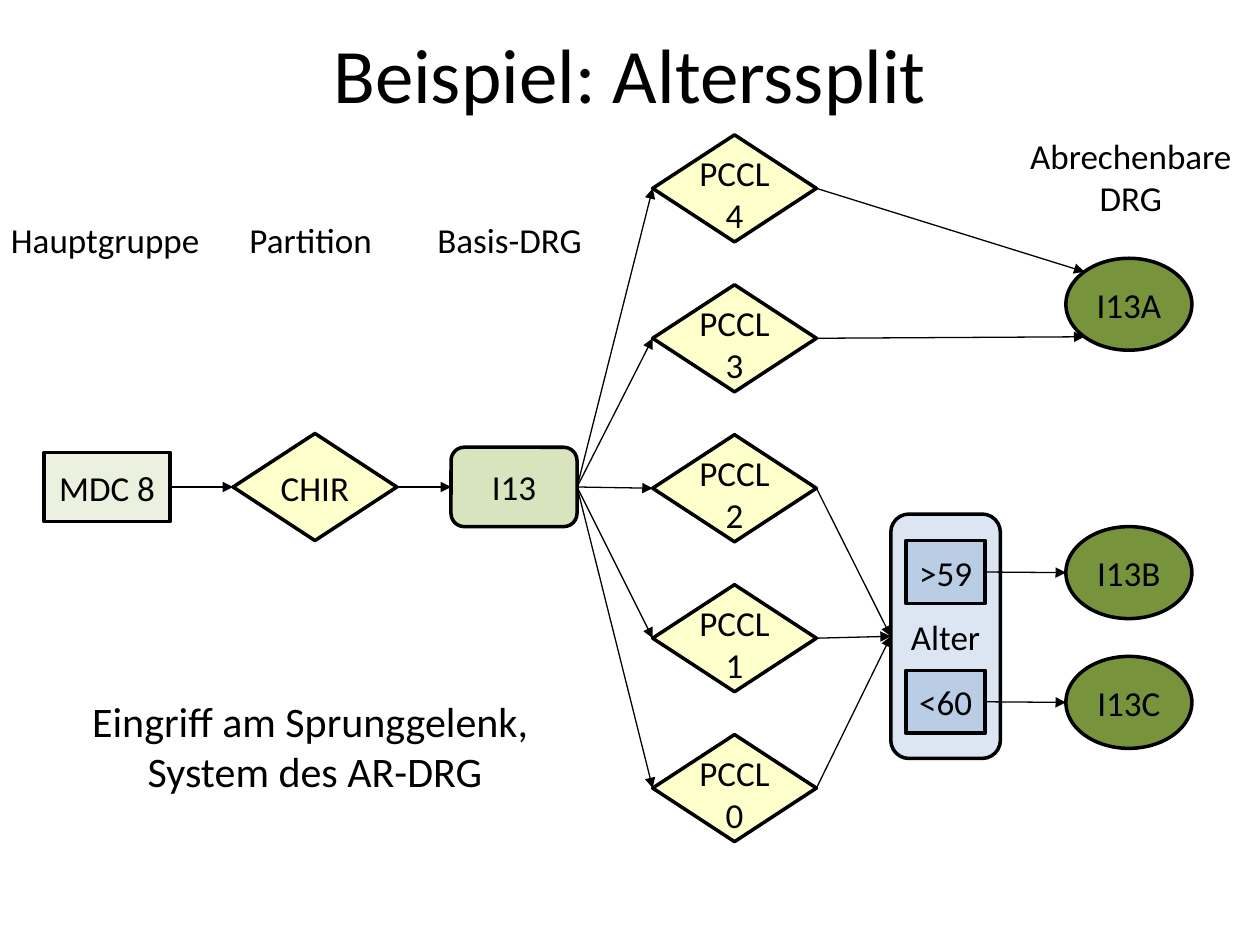
"""Build a decision-tree slide for an age split in the AR-DRG system."""
from dataclasses import dataclass
from math import sqrt

from lxml.etree import SubElement
from pptx import Presentation
from pptx.dml.color import RGBColor
from pptx.enum.shapes import MSO_CONNECTOR, MSO_SHAPE
from pptx.enum.text import MSO_ANCHOR, PP_ALIGN
from pptx.oxml.ns import qn
from pptx.util import Inches, Pt


@dataclass(frozen=True)
class Theme:
    font: str = "Calibri"
    ink: str = "000000"
    group: str = "EBF1DE"
    choice: str = "FFFFCC"
    base: str = "D7E4BD"
    age: str = "DCE6F2"
    limit: str = "B9CDE5"
    result: str = "77933C"
    title: int = 44
    note: int = 24
    label: int = 20
    edge: float = 2
    arrow: float = 0.75


THEME = Theme()
LEFT, RIGHT = 1, 3


def color(name):
    return RGBColor.from_string(getattr(THEME, name))


def write(shape, text, size, anchor=MSO_ANCHOR.MIDDLE, above=0.05, below=0.05):
    frame = shape.text_frame
    frame.text = text
    frame.word_wrap = True
    frame.vertical_anchor = anchor
    frame.margin_left = frame.margin_right = Inches(0.04)
    frame.margin_top, frame.margin_bottom = Inches(above), Inches(below)
    for line in frame.paragraphs:
        line.alignment = PP_ALIGN.CENTER
        for run in line.runs:
            run.font.name = THEME.font
            run.font.size = Pt(size)
            run.font.color.rgb = color("ink")


def add_title(slide, text):
    title = slide.shapes.title
    title.left, title.top = Inches(0.5), Inches(0)
    title.width, title.height = Inches(9), Inches(1.15)
    write(title, text, THEME.title)


def add_label(slide, text, box, size, **layout):
    label = slide.shapes.add_textbox(*map(Inches, box))
    write(label, text, size, **layout)


def add_node(slide, kind, text, box, fill, **layout):
    node = slide.shapes.add_shape(kind, *map(Inches, box))
    node.shadow.inherit = False
    node.fill.solid()
    node.fill.fore_color.rgb = color(fill)
    node.line.color.rgb = color("ink")
    node.line.width = Pt(THEME.edge)
    write(node, text, THEME.label, **layout)
    return node


def add_choice(slide, text, left, top, **layout):
    box = (left, top, 1.3, 0.85)
    return add_node(slide, MSO_SHAPE.FLOWCHART_DECISION, text, box, "choice", **layout)


def add_result(slide, text, top):
    return add_node(slide, MSO_SHAPE.OVAL, text, (8.46, top, 1, 0.73), "result")


def add_arrow(slide, start, point):
    arrow = slide.shapes.add_connector(MSO_CONNECTOR.STRAIGHT, 0, 0, *point)
    arrow.begin_connect(start, RIGHT)
    arrow.line.color.rgb = color("ink")
    arrow.line.width = Pt(THEME.arrow)
    props = arrow._element.spPr
    SubElement(props.find(qn("a:ln")), qn("a:tailEnd"), type="triangle")
    SubElement(props, qn("a:effectLst"))
    return arrow


def join(slide, start, end):
    arrow = add_arrow(slide, start, (end.left, end.top))
    arrow.end_connect(end, LEFT)


def reach(slide, start, oval, side=0):
    """Point an arrow at the oval's left (0), upper left (-1) or lower left (1)."""
    ratio = 1 / sqrt(2) if side else 1
    x = oval.left + oval.width / 2 * (1 - ratio)
    y = oval.top + oval.height / 2 * (1 + side * ratio)
    add_arrow(slide, start, (round(x), round(y)))


def main():
    deck = Presentation()
    deck.slide_width, deck.slide_height = Inches(10), Inches(7.5)
    slide = deck.slides.add_slide(deck.slide_layouts[5])
    add_title(slide, "Beispiel: Alterssplit")

    note = "Eingriff am Sprunggelenk, \nSystem des AR-DRG"
    add_label(slide, note, (0.1, 5.06, 4.8, 1.99), THEME.note,
              anchor=MSO_ANCHOR.TOP, above=0.46)
    for text, left, top, width in (
        ("Hauptgruppe", -0.04, 1.65, 1.75),
        ("Partition", 1.59, 1.65, 1.75),
        ("Basis-DRG", 3.17, 1.65, 1.75),
        ("Abrechenbare DRG", 8.07, 1.15, 1.81),
    ):
        add_label(slide, text, (left, top, width, 0.5), THEME.label)

    group = add_node(slide, MSO_SHAPE.RECTANGLE, "MDC 8", (0.35, 3.59, 1, 0.55), "group")
    part = add_choice(slide, "CHIR", 1.85, 3.44)
    base = add_node(slide, MSO_SHAPE.ROUNDED_RECTANGLE, "I13", (3.58, 3.55, 1, 0.63), "base")
    levels = [
        add_choice(slide, text, 5.18, 1.07 + 1.19 * row, above=0.08, below=0)
        for row, text in enumerate(("PCCL4", "PCCL 3", "PCCL 2", "PCCL 1", "PCCL 0"))
    ]
    age = add_node(slide, MSO_SHAPE.ROUNDED_RECTANGLE, "Alter", (7.07, 4.08, 0.87, 1.94), "age")
    first = add_result(slide, "I13A", 2.05)

    join(slide, group, part)
    join(slide, part, base)
    for level in levels:
        join(slide, base, level)
    reach(slide, levels[0], first, -1)
    reach(slide, levels[1], first, 1)
    for level in levels[2:]:
        join(slide, level, age)
    for text, code, top in ((">59", "I13B", 4.29), ("<60", "I13C", 5.32)):
        limit = add_node(slide, MSO_SHAPE.RECTANGLE, text, (7.19, top, 0.63, 0.5), "limit")
        reach(slide, limit, add_result(slide, code, top - 0.11))

    deck.save("out.pptx")


if __name__ == "__main__":
    main()
